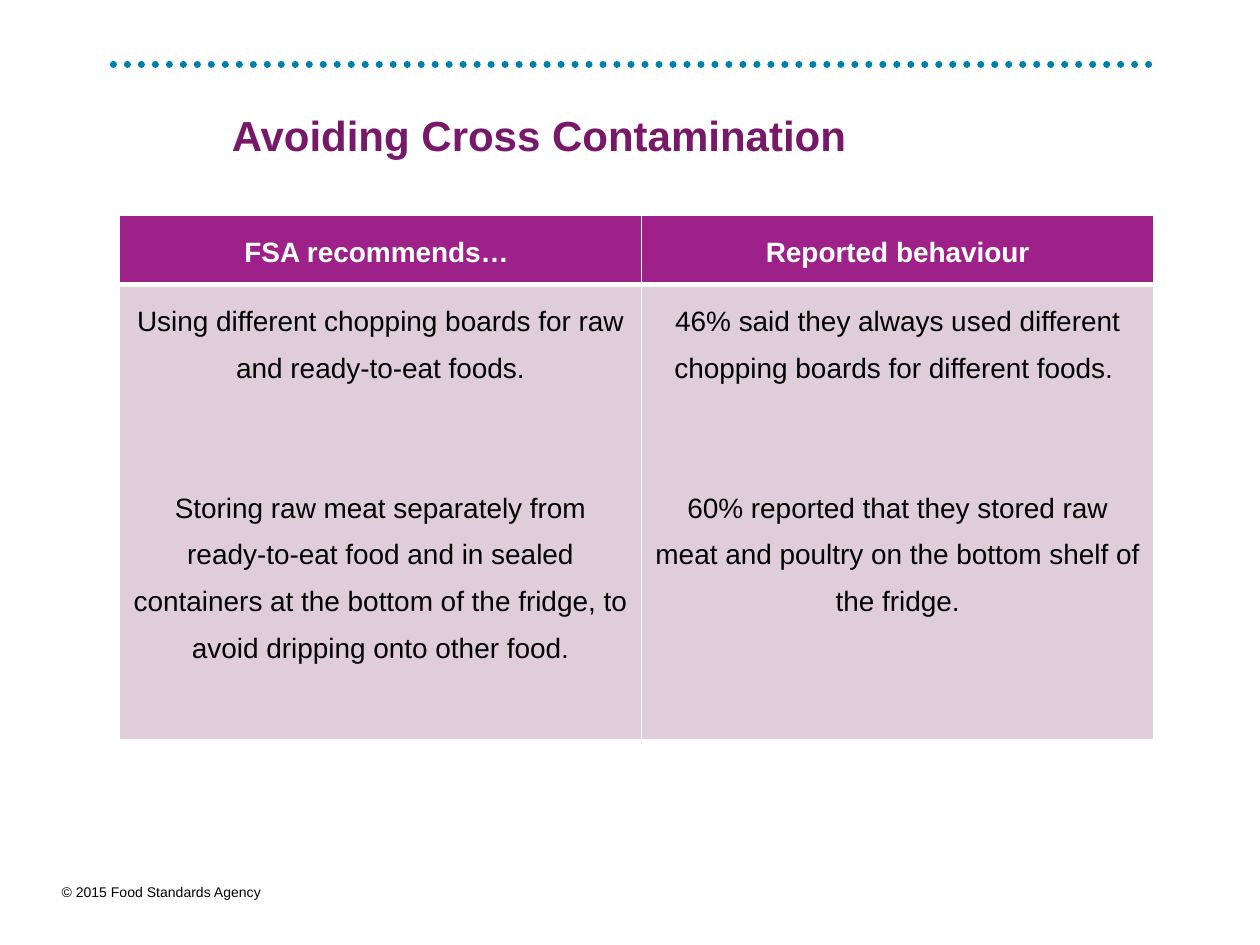
from lxml import etree
from pptx import Presentation
from pptx.dml.color import RGBColor
from pptx.enum.dml import MSO_LINE
from pptx.enum.shapes import MSO_CONNECTOR
from pptx.enum.text import MSO_ANCHOR, MSO_AUTO_SIZE, PP_ALIGN
from pptx.oxml.ns import qn
from pptx.util import Inches, Pt

STRAIGHT = MSO_CONNECTOR.STRAIGHT
DOTS = MSO_LINE.ROUND_DOT
MIDDLE = MSO_ANCHOR.MIDDLE
FIT = MSO_AUTO_SIZE.SHAPE_TO_FIT_TEXT
LEFT, CENTER = PP_ALIGN.LEFT, PP_ALIGN.CENTER

BLUE, PLUM, PURPLE = "0080B1", "771968", "9E218A"
PINK, WHITE, BLACK = "DFCDDA", "FFFFFF", "000000"


def color(code):
    return RGBColor.from_string(code)


def write(frame, *texts, size=16, ink=BLACK, bold=False, align=LEFT,
          lead=1.0, gap=0):
    """Fill a text frame, one paragraph per text, with gap points between."""
    for i, text in enumerate(texts):
        para = frame.add_paragraph() if i else frame.paragraphs[0]
        para.alignment = align
        para.line_spacing = lead
        if i and gap:
            para.space_before = Pt(gap)
        run = para.add_run()
        run.text = text
        run.font.name = "Arial"
        run.font.size = Pt(size)
        run.font.bold = bold
        run.font.color.rgb = color(ink)


def edge(cell, side, width):
    """Draw one white border of a cell; side is L, R, T or B."""
    props = cell._tc.get_or_add_tcPr()
    line = etree.SubElement(props, qn("a:ln" + side), w=str(Pt(width)))
    fill = etree.SubElement(line, qn("a:solidFill"))
    etree.SubElement(fill, qn("a:srgbClr"), val=WHITE)


class Page:
    def __init__(self, slide):
        self.shapes = slide.shapes

    def rule(self, x1, x2, y, ink, width):
        line = self.shapes.add_connector(
            STRAIGHT, Inches(x1), Inches(y), Inches(x2), Inches(y))
        line.line.color.rgb = color(ink)
        line.line.width = Pt(width)
        line.line.dash_style = DOTS
        props = line._element.spPr
        props.find(qn("a:ln")).set("cap", "rnd")
        etree.SubElement(props, qn("a:effectLst"))

    def text(self, box, text, wrap=True, **style):
        shape = self.shapes.add_textbox(*map(Inches, box))
        frame = shape.text_frame
        frame.word_wrap = wrap
        write(frame, text, **style)
        return frame

    def table(self, box, cols, rows, cells):
        grid = self.shapes.add_table(
            len(rows), len(cols), *map(Inches, box)).table
        grid.horz_banding = False
        for col, width in zip(grid.columns, cols):
            col.width = Inches(width)
        for row, height in zip(grid.rows, rows):
            row.height = Inches(height)
        for r, row in enumerate(cells):
            head = r == 0
            for c, texts in enumerate(row):
                cell = grid.cell(r, c)
                widths = (1, 1, 1, 3) if head else (1, 1, 3, 1)
                for side, width in zip("LRTB", widths):
                    edge(cell, side, width)
                cell.fill.solid()
                cell.fill.fore_color.rgb = color(PURPLE if head else PINK)
                write(cell.text_frame, *texts, bold=head, align=CENTER,
                      ink=WHITE if head else BLACK, lead=1.5, gap=53.3)


def main():
    deck = Presentation()
    deck.slide_width, deck.slide_height = Inches(10), Inches(7.5)
    page = Page(deck.slides.add_slide(deck.slide_layouts[6]))

    # Dotted rule and footer
    page.rule(0.9, 9.13, 0.51, BLUE, 4)
    foot = page.text((0.39, 6.96, 1.81, 0.24),
                     "© 2015 Food Standards Agency", wrap=False, size=8)
    foot.auto_size = FIT

    # Title, indented from the left edge of the rule
    title = page.text((0.91, 0.57, 8.21, 1.05), "Avoiding Cross Contamination",
                      size=24, ink=PLUM, bold=True, lead=0.9)
    title.vertical_anchor = MIDDLE
    title.margin_left = Inches(0.93)
    title.margin_right = title.margin_top = title.margin_bottom = 0

    # Advice against behaviour
    page.table((0.95, 1.71, 8.21, 4.16), (4.14, 4.07), (0.55, 3.61), [
        [["FSA recommends… "], ["Reported behaviour"]],
        [["Using different chopping boards for raw and ready-to-eat foods.",
          "Storing raw meat separately from ready-to-eat food and in sealed "
          "containers at the bottom of the fridge, to avoid dripping onto "
          "other food."],
         ["46% said they always used different chopping boards for "
          "different foods. ",
          "60% reported that they stored raw meat and poultry on the bottom "
          "shelf of the fridge."]],
    ])

    deck.save("out.pptx")


if __name__ == "__main__":
    main()
